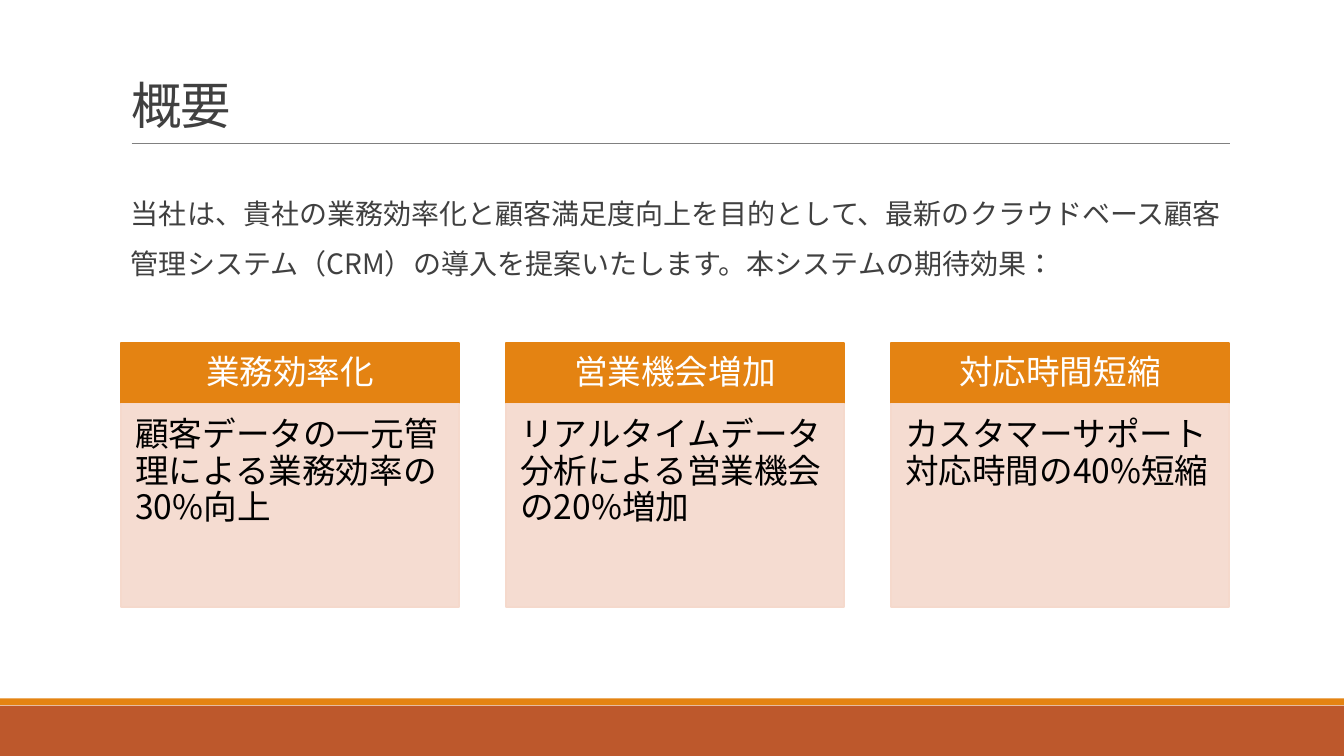
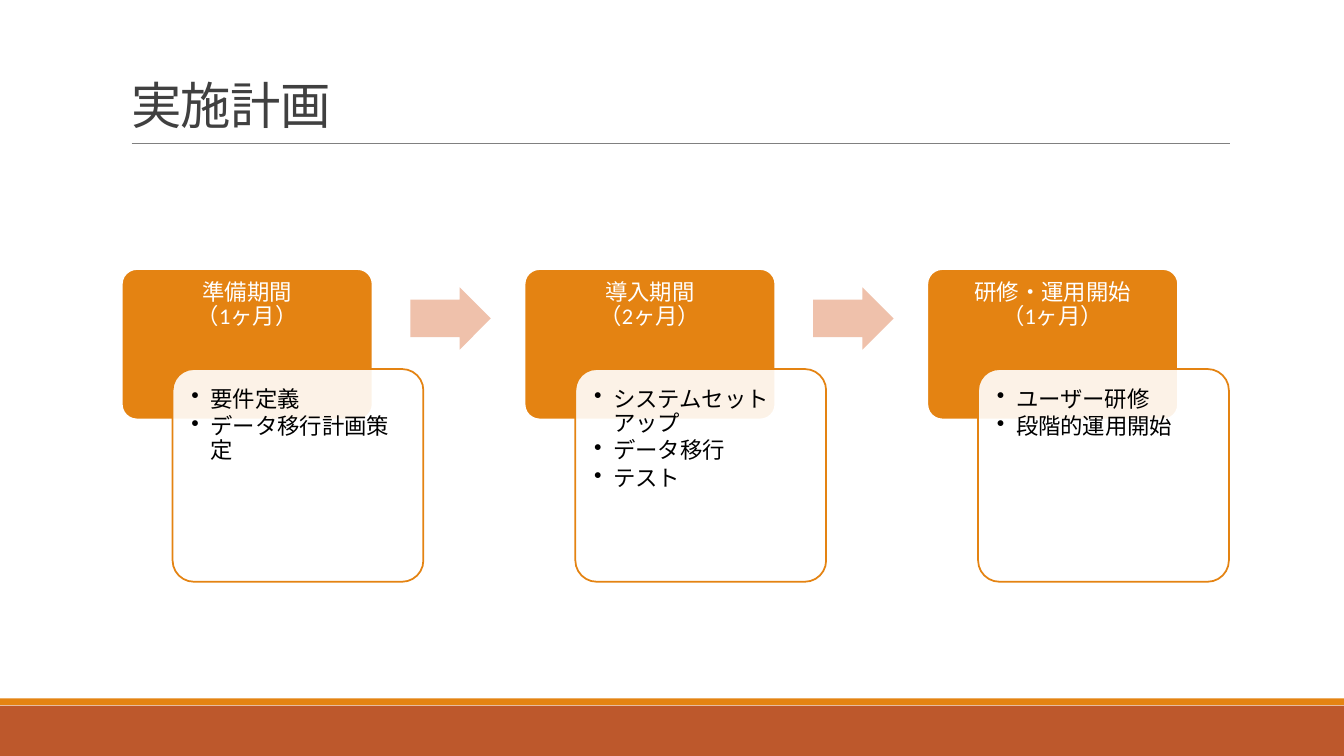
from lxml.etree import SubElement
from pptx import Presentation
from pptx.dml.color import RGBColor
from pptx.enum.shapes import MSO_CONNECTOR, MSO_SHAPE as SHAPE
from pptx.enum.text import MSO_ANCHOR as ANCHOR, MSO_AUTO_SIZE, PP_ALIGN as ALIGN
from pptx.oxml.ns import qn
from pptx.util import Cm, Pt

COLORS = {
    "rust": "BD582C", "orange": "E48312", "rule": "808080", "ink": "404040",
    "blush": "F5D9CC", "peach": "EFC1AB", "white": "FFFFFF", "black": "000000",
}
JAPANESE_FONT = "Noto Sans CJK JP"


def insets(left, top, right, bottom):
    return {"margin_left": Cm(left), "margin_top": Cm(top),
            "margin_right": Cm(right), "margin_bottom": Cm(bottom)}


STYLES = {
    "title": {
        "frame": {"vertical_anchor": ANCHOR.BOTTOM},
        "paragraph": {"alignment": ALIGN.LEFT, "line_spacing": 0.85},
        "font": {"name": JAPANESE_FONT, "size": Pt(36)},
        "color": "ink", "run": {"spc": "-50"},
    },
    "lead": {
        "frame": {"vertical_anchor": ANCHOR.TOP, **insets(0, 0.13, 0, 0.13)},
        "paragraph": {"line_spacing": 1.5, "space_before": Pt(12), "space_after": Pt(2)},
        "font": {"name": JAPANESE_FONT, "size": Pt(20)},
        "color": "ink", "indent": (0.25, 0), "bullet": ("buNone", {}),
    },
    "card_header": {
        "frame": {"vertical_anchor": ANCHOR.MIDDLE, **insets(0.48, 0.28, 0.48, 0.28)},
        "paragraph": {"alignment": ALIGN.CENTER, "line_spacing": 0.9},
        "font": {"name": JAPANESE_FONT, "size": Pt(24)},
        "color": "white",
    },
    "card_body": {
        "frame": {"vertical_anchor": ANCHOR.TOP, **insets(0.36, 0.36, 0.48, 0.53)},
        "paragraph": {"alignment": ALIGN.LEFT, "line_spacing": 0.9},
        "font": {"name": JAPANESE_FONT, "size": Pt(24)},
        "color": "black",
    },
    "phase": {
        "frame": {"vertical_anchor": ANCHOR.TOP, **insets(0.2, 0.2, 0.2, 0.2)},
        "paragraph": {"alignment": ALIGN.CENTER, "line_spacing": 0.9},
        "font": {"name": "Calibri", "size": Pt(16)},
        "color": "white",
    },
    "tasks": {
        "frame": {"vertical_anchor": ANCHOR.TOP, **insets(0.32, 0.32, 0.32, 0.32)},
        "paragraph": {"alignment": ALIGN.LEFT, "line_spacing": 0.9, "space_after": Pt(2.4)},
        "font": {"name": "Calibri", "size": Pt(16)},
        "color": "black", "indent": (0.48, -0.48), "bullet": ("buChar", {"char": "•"}),
    },
}


def write(shape, lines, style_name):
    style = STYLES[style_name]
    frame = shape.text_frame
    frame.auto_size = MSO_AUTO_SIZE.NONE
    frame.word_wrap = True
    for name, value in style["frame"].items():
        setattr(frame, name, value)
    for index, line in enumerate(lines):
        paragraph = frame.add_paragraph() if index else frame.paragraphs[0]
        paragraph.text = line
        for name, value in style["paragraph"].items():
            setattr(paragraph, name, value)
        if "bullet" in style:
            properties = paragraph._p.get_or_add_pPr()
            for name, length in zip(("marL", "indent"), style["indent"]):
                properties.set(name, str(Cm(length)))
            tag, attributes = style["bullet"]
            SubElement(properties, qn("a:" + tag), attributes)
        for run in paragraph.runs:
            for name, value in style["font"].items():
                setattr(run.font, name, value)
            run.font.color.rgb = RGBColor.from_string(COLORS[style["color"]])
            properties = run._r.get_or_add_rPr()
            for name, value in {"lang": "ja-JP", **style.get("run", {})}.items():
                properties.set(name, value)
            SubElement(properties, qn("a:ea"), typeface=JAPANESE_FONT)


def add_box(slide, kind, box, fill, line=None, opacity=100, adjustments=()):
    shape = slide.shapes.add_shape(kind, *[Cm(length) for length in box])
    shape.shadow.inherit = False
    shape.fill.solid()
    shape.fill.fore_color.rgb = RGBColor.from_string(COLORS[fill])
    if line:
        shape.line.color.rgb = RGBColor.from_string(COLORS[line])
        shape.line.width = Pt(1.25)
    else:
        shape.line.fill.background()
    for index, value in enumerate(adjustments):
        shape.adjustments[index] = value
    if opacity < 100:
        color = shape._element.spPr.find(qn("a:solidFill")).find(qn("a:srgbClr"))
        SubElement(color, qn("a:alpha"), val=str(opacity * 1000))
    return shape


presentation = Presentation()
presentation.slide_width = Cm(33.87)
presentation.slide_height = Cm(19.05)
master = presentation.slide_master
master_title = master.placeholders[0]
for name, length in {"left": 3.05, "top": 0.79, "width": 27.94, "height": 2.74}.items():
    setattr(master_title, name, Cm(length))

overview = presentation.slides.add_slide(presentation.slide_layouts[1])
plan = presentation.slides.add_slide(presentation.slide_layouts[5])
for slide, title in ((overview, "概要"), (plan, "実施計画")):
    write(slide.shapes.title, [title], "title")

title_rule = overview.shapes.add_connector(
    MSO_CONNECTOR.STRAIGHT, Cm(3.32), Cm(3.61), Cm(31), Cm(3.61))
title_rule.line.color.rgb = RGBColor.from_string(COLORS["rule"])
title_rule.line.width = Pt(0.5)
SubElement(title_rule._element.spPr, qn("a:effectLst"))
footer_band = add_box(overview, SHAPE.RECTANGLE, (0, 17.78, 33.87, 1.27), "rust")
footer_stripe = add_box(overview, SHAPE.RECTANGLE, (0, 17.6, 33.87, 0.17), "orange")
for shape in (title_rule, footer_stripe, footer_band):
    master.shapes._spTree.insert(2, shape._element)

lead = overview.placeholders[1]
for name, length in {"left": 3.05, "top": 4.39, "width": 27.94, "height": 3.02}.items():
    setattr(lead, name, Cm(length))
write(lead, ["当社は、貴社の業務効率化と顧客満足度向上を目的として、最新のクラウドベース顧客管理システム（CRM）の導入を提案いたします。本システムの期待効果："], "lead")

benefits = [
    ("業務効率化", "顧客データの一元管理による業務効率の30%向上"),
    ("営業機会増加", "リアルタイムデータ分析による営業機会の20%増加"),
    ("対応時間短縮", "カスタマーサポート対応時間の40%短縮"),
]
for index, (heading, effect) in enumerate(benefits):
    left = 3.05 + index * 9.7
    header = add_box(overview, SHAPE.RECTANGLE, (left, 8.64, 8.52, 1.53), "orange", "orange")
    write(header, [heading], "card_header")
    body = add_box(overview, SHAPE.RECTANGLE, (left, 10.17, 8.52, 5.13), "blush", "blush", 90)
    write(body, [effect], "card_body")

phases = [
    ("準備期間\v（1ヶ月）", ["要件定義", "データ移行計画策定"]),
    ("導入期間\v（2ヶ月）", ["システムセットアップ", "データ移行", "テスト"]),
    ("研修・運用開始\v（1ヶ月）", ["ユーザー研修", "段階的運用開始"]),
]
for index, (period, tasks) in enumerate(phases):
    left = 3.07 + index * 10.15
    phase = add_box(plan, SHAPE.ROUNDED_RECTANGLE, (left, 6.78, 6.32, 3.79),
                    "orange", "white", adjustments=[0.1])
    write(phase, [period], "phase")
    details = add_box(plan, SHAPE.ROUNDED_RECTANGLE, (left + 1.28, 9.3, 6.32, 5.36),
                      "white", "orange", 90, [0.1])
    write(details, tasks, "tasks")
    if index < len(phases) - 1:
        add_box(plan, SHAPE.RIGHT_ARROW, (left + 7.27, 7.24, 2.03, 1.57),
                "peach", adjustments=[0.6, 0.5])

presentation.save("out.pptx")
